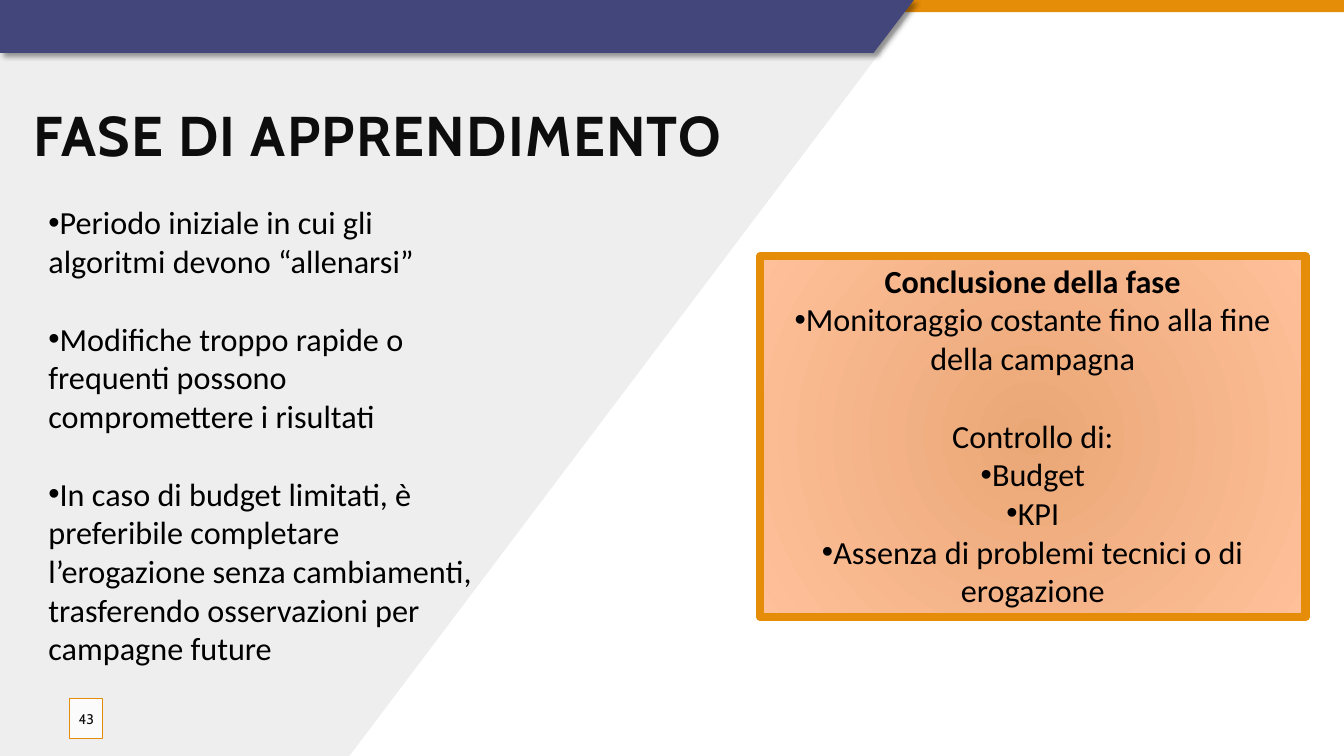
from lxml.etree import SubElement
from pptx import Presentation
from pptx.dml.color import RGBColor
from pptx.enum.shapes import MSO_SHAPE
from pptx.enum.text import MSO_ANCHOR, MSO_AUTO_SIZE, PP_ALIGN
from pptx.oxml import parse_xml
from pptx.oxml.ns import nsdecls, qn
from pptx.util import Inches, Pt

WHITE = RGBColor(0xFF, 0xFF, 0xFF)
BLACK = RGBColor(0x00, 0x00, 0x00)
INK = RGBColor(0x0D, 0x0D, 0x0D)
GREY = RGBColor(0xEE, 0xEE, 0xEE)
ORANGE = RGBColor(0xE5, 0x8C, 0x09)
INDIGO = RGBColor(0x43, 0x46, 0x7B)
TAN = RGBColor(0xEA, 0xA7, 0x76)
PEACH = RGBColor(0xFF, 0xC0, 0x9A)

HEADING_FONT, BODY_FONT = "Cabin", "Calibri"
BODY_SIZE = 23
BLANK_LINE = 28  # points of space that separate the groups of text


def write(frame, text, first=False, font=BODY_FONT, size=BODY_SIZE, color=BLACK,
          bold=False, align=PP_ALIGN.LEFT, bullet=False, before=0, tracking=0):
    """Write one paragraph into a text frame."""
    paragraph = frame.paragraphs[0] if first else frame.add_paragraph()
    paragraph.alignment = align
    paragraph.space_before = Pt(before)
    paragraph.space_after = Pt(0)
    properties = paragraph._p.get_or_add_pPr()
    properties.set("marL", "0")
    properties.set("indent", "0")
    if bullet:
        SubElement(properties, qn("a:buFont")).set("typeface", "Arial")
        SubElement(properties, qn("a:buChar")).set("char", "•")
    else:
        SubElement(properties, qn("a:buNone"))
    run = paragraph.add_run()
    run.text = text
    run.font.name, run.font.size, run.font.bold = font, Pt(size), bold
    run.font.color.rgb = color
    if tracking:
        run._r.get_or_add_rPr().set("spc", str(tracking * 100))


class SlideBuilder:
    """Places elements on a grid of 100 columns by 100 rows."""

    def __init__(self, deck):
        self.column = deck.slide_width / 100
        self.row = deck.slide_height / 100
        self.slide = deck.slides.add_slide(deck.slide_layouts[1])
        self.shapes = self.slide.shapes

    def cells(self, left, top, width, height):
        return (round(left * self.column), round(top * self.row),
                round(width * self.column), round(height * self.row))

    def band(self, corners, color):
        builder = self.shapes.build_freeform(*corners[0], scale=(self.column, self.row))
        builder.add_line_segments(corners[1:], close=True)
        band = builder.convert_to_shape()
        band.shadow.inherit = False
        band.fill.solid()
        band.fill.fore_color.rgb = color
        band.line.fill.background()
        return band

    def box(self, area, color, line=None, weight=0):
        box = self.shapes.add_shape(MSO_SHAPE.RECTANGLE, *self.cells(*area))
        box.shadow.inherit = False
        box.fill.solid()
        box.fill.fore_color.rgb = color
        if line is None:
            box.line.fill.background()
        else:
            box.line.color.rgb = line
            box.line.width = Pt(weight)
        box.text_frame.word_wrap = True
        return box

    def placeholder(self, holder, area, anchor):
        holder.left, holder.top, holder.width, holder.height = self.cells(*area)
        self.shapes._spTree.append(holder._element)  # bring in front of the backdrop
        frame = holder.text_frame
        frame.word_wrap = True
        frame.auto_size = MSO_AUTO_SIZE.NONE
        frame.vertical_anchor = anchor
        return frame

    def drop_shadow(self, shape, blur, distance, degrees, opacity):
        effects = shape._element.spPr.find(qn("a:effectLst"))
        effects.append(parse_xml(
            f'<a:outerShdw {nsdecls("a")} blurRad="{Pt(blur)}" dist="{Pt(distance)}" '
            f'dir="{degrees * 60000}" algn="tl" rotWithShape="0"><a:srgbClr val="{BLACK}">'
            f'<a:alpha val="{opacity * 1000}"/></a:srgbClr></a:outerShdw>'))

    def radial_fill(self, shape, inner, outer):
        shape.fill.gradient()
        for stop, color in zip(shape.fill.gradient_stops, (inner, outer)):
            stop.color.rgb = color
        gradient = shape._element.spPr.find(qn("a:gradFill"))
        gradient.remove(gradient.find(qn("a:lin")))
        gradient.append(parse_xml(
            f'<a:path {nsdecls("a")} path="circle">'
            '<a:fillToRect l="50000" t="50000" r="50000" b="50000"/></a:path>'))


def main():
    deck = Presentation()
    deck.slide_width, deck.slide_height = Inches(13.33), Inches(7.5)
    page = SlideBuilder(deck)

    # Backdrop and header bands
    page.band([(0, 0), (68.34, 0), (68.34, 0.93), (26.03, 100), (0, 100)], GREY)
    page.box((0, 0, 100, 1.6), ORANGE)
    header = page.band([(0, 0), (68.34, 0), (65.49, 6.67), (0, 6.67)], INDIGO)
    page.drop_shadow(header, blur=4, distance=3, degrees=45, opacity=40)

    # Title
    heading = page.placeholder(page.shapes.title, (1.73, 12.67, 88.67, 10.27),
                               MSO_ANCHOR.MIDDLE)
    write(heading, "FASE DI APPRENDIMENTO", first=True, font=HEADING_FONT, size=40,
          color=INK, bold=True, tracking=1)

    # Page number
    number = page.box((5.18, 92.4, 2.48, 5.33), WHITE, ORANGE, 0.75)
    tint = number._element.spPr.find(qn("a:solidFill")).find(qn("a:srgbClr"))
    SubElement(tint, qn("a:alpha")).set("val", "82000")
    number.text_frame.margin_left = number.text_frame.margin_right = 0
    number.text_frame.vertical_anchor = MSO_ANCHOR.MIDDLE
    write(number.text_frame, "43", first=True, font=HEADING_FONT, size=10, color=INK,
          align=PP_ALIGN.CENTER)

    # Learning phase points
    points = page.placeholder(page.slide.placeholders[1], (2.85, 26.13, 33.53, 63.33),
                              MSO_ANCHOR.TOP)
    for index, point in enumerate((
            "Periodo iniziale in cui gli algoritmi devono “allenarsi”",
            "Modifiche troppo rapide o frequenti possono compromettere i risultati",
            "In caso di budget limitati, è preferibile completare l’erogazione senza "
            "cambiamenti, trasferendo osservazioni per campagne future")):
        write(points, point, first=index == 0, bullet=True,
              before=BLANK_LINE if index else 0)

    # Closing phase panel
    closing = page.box((56.56, 33.87, 40.59, 47.73), PEACH, ORANGE, 6)
    page.radial_fill(closing, TAN, PEACH)
    checks = closing.text_frame
    checks.vertical_anchor = MSO_ANCHOR.TOP
    write(checks, "Conclusione della fase", first=True, bold=True, align=PP_ALIGN.CENTER)
    write(checks, "Monitoraggio costante fino alla fine della campagna", bullet=True,
          align=PP_ALIGN.CENTER)
    write(checks, "Controllo di:", align=PP_ALIGN.CENTER, before=BLANK_LINE)
    for check in ("Budget", "KPI", "Assenza di problemi tecnici o di erogazione"):
        write(checks, check, bullet=True, align=PP_ALIGN.CENTER)

    deck.save("out.pptx")


if __name__ == "__main__":
    main()
